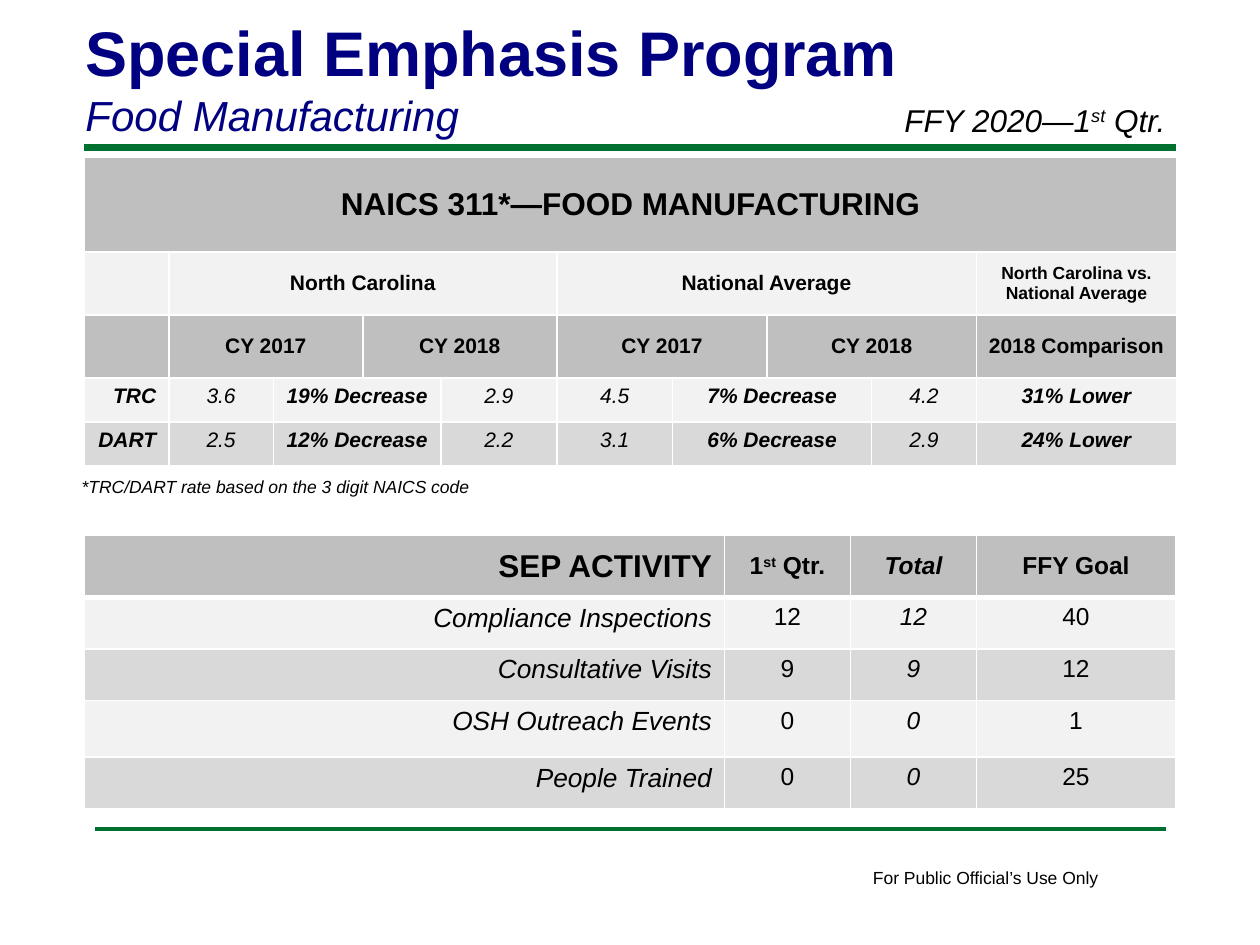
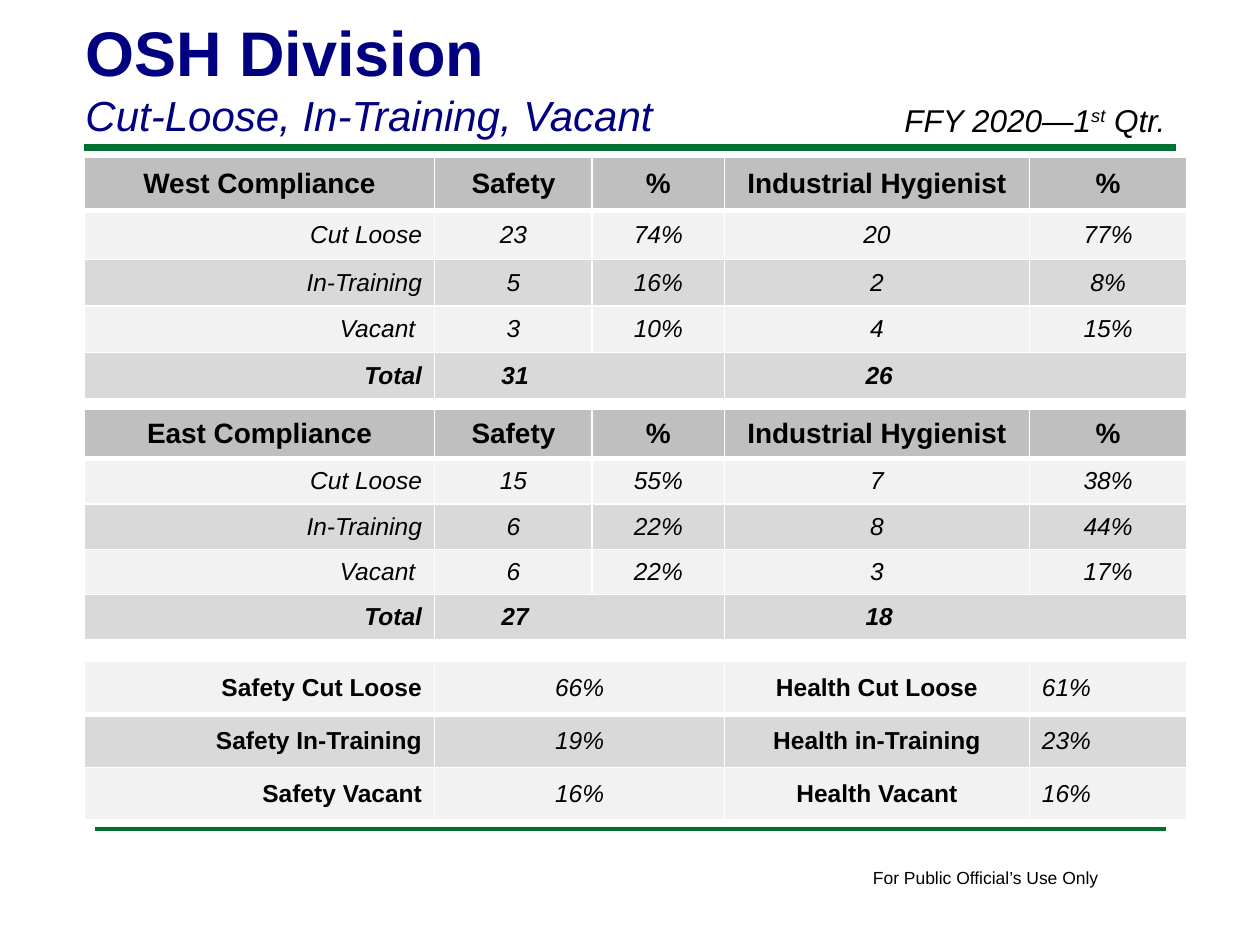
"""Build two quarterly report slides on food manufacturing and OSH staffing."""
import dataclasses
import typing

import pptx
import pptx.dml.color
import pptx.enum.shapes
import pptx.enum.text
import pptx.oxml
import pptx.oxml.ns
import pptx.slide
import pptx.util

Inches = pptx.util.Inches
Pt = pptx.util.Pt
ALIGN = pptx.enum.text.PP_ALIGN
ANCHOR = pptx.enum.text.MSO_ANCHOR

FONT = "Arial"
BLACK, WHITE, NAVY, GREEN = "000000", "FFFFFF", "000080", "007030"
HEAD, LIGHT, MID = "BFBFBF", "F2F2F2", "D9D9D9"
LEFT = 0.67
QUARTER = "FFY 2020—1^st^ Qtr."


@dataclasses.dataclass(frozen=True)
class Style:
    size: float
    bold: bool = False
    italic: bool = False
    color: str = BLACK
    align: typing.Any = ALIGN.LEFT
    anchor: typing.Any = ANCHOR.TOP
    indent: float = 0.1


@dataclasses.dataclass(frozen=True)
class Row:
    height: float
    fill: str
    texts: tuple[str, ...]
    styles: tuple[Style, ...]
    spans: tuple[int, ...] = ()


@dataclasses.dataclass(frozen=True)
class Grid:
    top: float
    widths: tuple[float, ...]
    rows: tuple[Row, ...]
    rule_below_first: float = 3


@dataclasses.dataclass(frozen=True)
class Label:
    box: tuple[float, float, float, float]
    lines: tuple[tuple[str, Style], ...]
    wrap: bool = True


@dataclasses.dataclass(frozen=True)
class Rule:
    left: float
    right: float
    y: float
    width: float


TITLE = Style(36, bold=True, color=NAVY)
SUBTITLE = Style(24, italic=True, color=NAVY)
NOTE = Style(10, italic=True)
RULES = (Rule(0.67, 9.33, 1.17, 4), Rule(0.75, 9.25, 6.58, 2))
FOOTER = Label((6.83, 6.83, 2.01, 0.27),
               (("For Public Official’s Use Only", Style(10)),), wrap=False)
PERIOD = Label((7.08, 0.75, 2.5, 0.4), ((QUARTER, Style(18, italic=True)),))


def centered(size: float, bold: bool = False, italic: bool = False,
             anchor: typing.Any = ANCHOR.MIDDLE) -> Style:
    """Return a centred style."""
    return Style(size, bold, italic, align=ALIGN.CENTER, anchor=anchor)


def right(size: float, bold: bool = False, italic: bool = False,
          anchor: typing.Any = ANCHOR.MIDDLE) -> Style:
    """Return a right-aligned style."""
    return Style(size, bold, italic, align=ALIGN.RIGHT, anchor=anchor)


def rgb(color: str) -> pptx.dml.color.RGBColor:
    """Turn a hex string into a colour."""
    return pptx.dml.color.RGBColor.from_string(color)


def write(p: typing.Any, text: str, style: Style) -> None:
    """Fill a paragraph, raising the parts between carets."""
    p.alignment = style.align
    font = {"name": FONT, "size": Pt(style.size),
            "bold": style.bold, "italic": style.italic}
    for i, part in enumerate(text.split("^")):
        r = p.add_run()
        r.text = part
        for key, value in font.items():
            setattr(r.font, key, value)
        r.font.color.rgb = rgb(style.color)
        if i % 2:
            r._r.get_or_add_rPr().set("baseline", "30000")


def draw_label(s: pptx.slide.Slide, label: Label) -> None:
    """Add a text box with one paragraph per line."""
    tf = s.shapes.add_textbox(*map(Inches, label.box)).text_frame
    tf.word_wrap = label.wrap
    tf.auto_size = pptx.enum.text.MSO_AUTO_SIZE.SHAPE_TO_FIT_TEXT
    for i, (text, style) in enumerate(label.lines):
        write(tf.add_paragraph() if i else tf.paragraphs[0], text, style)


def draw_rule(s: pptx.slide.Slide, rule: Rule) -> None:
    """Add a horizontal green line."""
    sp = s.shapes.add_connector(
        pptx.enum.shapes.MSO_CONNECTOR.STRAIGHT, Inches(rule.left),
        Inches(rule.y), Inches(rule.right), Inches(rule.y))
    sp.line.color.rgb = rgb(GREEN)
    sp.line.width = Pt(rule.width)
    sp._element.spPr.append(pptx.oxml.parse_xml(
        f"<a:effectLst {pptx.oxml.ns.nsdecls('a')}/>"))


def set_borders(cell: typing.Any, top: float, bottom: float) -> None:
    """Give a cell white borders."""
    tcPr = cell._tc.get_or_add_tcPr()
    for side, width in {"L": 1, "R": 1, "T": top, "B": bottom}.items():
        tcPr.append(pptx.oxml.parse_xml(
            f'<a:ln{side} {pptx.oxml.ns.nsdecls("a")} w="{Pt(width)}">'
            f'<a:solidFill><a:srgbClr val="{WHITE}"/></a:solidFill>'
            f'</a:ln{side}>'))


def draw_grid(s: pptx.slide.Slide, grid: Grid) -> None:
    """Add a table with its spans, fills and borders."""
    table = s.shapes.add_table(
        len(grid.rows), len(grid.widths), Inches(LEFT), Inches(grid.top),
        Inches(sum(grid.widths)),
        Inches(sum(row.height for row in grid.rows))).table
    for column, width in zip(table.columns, grid.widths):
        column.width = Inches(width)
    for i, row in enumerate(grid.rows):
        table.rows[i].height = Inches(row.height)
        for cell in table.rows[i].cells:
            set_borders(cell, grid.rule_below_first if i == 1 else 1,
                        grid.rule_below_first if i == 0 else 1)
            cell.fill.solid()
            cell.fill.fore_color.rgb = rgb(row.fill)
        col = 0
        spans = row.spans or (1,) * len(row.texts)
        for text, style, span in zip(row.texts, row.styles, spans):
            cell = table.cell(i, col)
            if span > 1:
                cell.merge(table.cell(i, col + span - 1))
            cell.vertical_anchor = style.anchor
            cell.margin_left = Inches(style.indent)
            if text:
                write(cell.text_frame.paragraphs[0], text, style)
            col += span


def add_slide(prs: typing.Any, title: str, subtitle: str,
              grids: tuple[Grid, ...], labels: tuple[Label, ...] = ()) -> None:
    """Add a slide with the shared frame and its tables."""
    s = prs.slides.add_slide(prs.slide_layouts[6])
    for rule in RULES:
        draw_rule(s, rule)
    heading = Label((0.58, 0.06, 8.25, 1.11),
                    ((title, TITLE), (subtitle, SUBTITLE)))
    for label in (FOOTER, heading, PERIOD, *labels):
        draw_label(s, label)
    for grid in grids:
        draw_grid(s, grid)


def rates_grid() -> Grid:
    """Describe the injury rate table."""
    bold = centered(12, bold=True)
    rate = centered(12, italic=True, anchor=ANCHOR.TOP)
    change = centered(12, True, True, ANCHOR.TOP)
    styles = (right(12, True, True, ANCHOR.TOP),
              rate, change, rate, rate, change, rate, change)
    spans = (1, 1, 2, 1, 1, 2, 1, 1)
    return Grid(1.25, (0.67, 0.83, 0.71, 0.62, 0.92, 0.92, 0.75, 0.83, 0.83, 1.59), (
        Row(0.75, HEAD, ("NAICS 311*—FOOD MANUFACTURING",),
            (centered(18, bold=True),), (10,)),
        Row(0.5, LIGHT, ("", "North Carolina", "National Average",
                         "North Carolina vs. National Average"),
            (bold, bold, bold, centered(10, bold=True)), (1, 4, 4, 1)),
        Row(0.5, HEAD, ("", *("CY 2017", "CY 2018") * 2, "2018 Comparison"),
            (bold,) * 6, (1, 2, 2, 2, 2, 1)),
        Row(0.35, LIGHT, ("TRC", "3.6", "19% Decrease", "2.9", "4.5",
                          "7% Decrease", "4.2", "31% Lower"), styles, spans),
        Row(0.35, MID, ("DART", "2.5", "12% Decrease", "2.2", "3.1",
                        "6% Decrease", "2.9", "24% Lower"), styles, spans),
    ), rule_below_first=1)


def activity_grid() -> Grid:
    """Describe the activity table."""
    bold = centered(14, bold=True)
    plain = centered(14, anchor=ANCHOR.TOP)
    styles = (right(15, italic=True, anchor=ANCHOR.TOP), plain,
              centered(14, italic=True, anchor=ANCHOR.TOP), plain)
    return Grid(4.25, (5.08, 1, 1, 1.58), (
        Row(0.49, HEAD, ("SEP ACTIVITY", "1^st^ Qtr.", "Total", "FFY Goal"),
            (right(18, bold=True), bold, centered(14, True, True), bold)),
        Row(0.41, LIGHT, ("Compliance Inspections", "12", "12", "40"), styles),
        Row(0.41, MID, ("Consultative Visits", "9", "9", "12"), styles),
        Row(0.45, LIGHT, ("OSH Outreach Events", "0", "0", "1"), styles),
        Row(0.41, MID, ("People Trained", "0", "0", "25"), styles),
    ))


def staffing_grid(region: str, top: float, heights: tuple[float, ...],
                  counts: tuple[tuple[str, ...], ...],
                  totals: tuple[str, str]) -> Grid:
    """Describe the staffing table of one region."""
    names = ("Cut Loose", "In-Training", "Vacant ")
    styles = (right(14, italic=True),) + (centered(14, italic=True),) * 4
    total_styles = (right(14, True, True),) + tuple(
        Style(14, True, True, anchor=ANCHOR.MIDDLE, indent=indent)
        for indent in (0.53, 1.12))
    header = Row(heights[0], HEAD, (f"{region} Compliance", "Safety", "%",
                                    "Industrial Hygienist", "%"),
                 (centered(16, bold=True),) * 5)
    body = tuple(
        Row(height, fill, (name, *values), styles)
        for height, fill, name, values
        in zip(heights[1:], (LIGHT, MID, LIGHT), names, counts))
    total = Row(heights[-1], MID, ("Total", *totals), total_styles, (1, 2, 2))
    return Grid(top, (2.78, 1.25, 1.05, 2.42, 1.25), (header, *body, total))


def summary_grid() -> Grid:
    """Describe the table of overall shares."""
    styles = (right(14, bold=True), centered(14, italic=True),
              centered(14, bold=True),
              Style(14, italic=True, anchor=ANCHOR.MIDDLE))
    return Grid(5.25, (2.78, 2.3, 2.42, 1.25), tuple(
        Row(0.42, fill, texts, styles) for fill, texts in (
            (LIGHT, ("Safety Cut Loose", "66%", "Health Cut Loose", "61%")),
            (MID, ("Safety In-Training", "19%", "Health in-Training", "23%")),
            (LIGHT, ("Safety Vacant", "16%", "Health Vacant", "16%")))))


def main() -> None:
    """Build and save the presentation."""
    prs = pptx.Presentation()
    prs.slide_width, prs.slide_height = Inches(10), Inches(7.5)
    footnote = Label((0.55, 3.73, 3.38, 0.27), (
        ("*TRC/DART rate based on the 3 digit NAICS code", NOTE),), wrap=False)
    add_slide(prs, "Special Emphasis Program", "Food Manufacturing",
              (activity_grid(), rates_grid()), (footnote,))
    west = staffing_grid("West", 1.25, (0.42, 0.39, 0.37, 0.37, 0.37), (
        ("23", "74%", "20", "77%"), ("5", "16%", "2", "8%"),
        ("3", "10%", "4", "15%")), ("31", "26"))
    east = staffing_grid("East", 3.25, (0.39, 0.36, 0.36, 0.36, 0.36), (
        ("15", "55%", "7", "38%"), ("6", "22%", "8", "44%"),
        ("6", "22%", "3", "17%")), ("27", "18"))
    add_slide(prs, "OSH Division", "Cut-Loose, In-Training, Vacant",
              (east, west, summary_grid()))
    prs.save("out.pptx")


if __name__ == "__main__":
    main()
